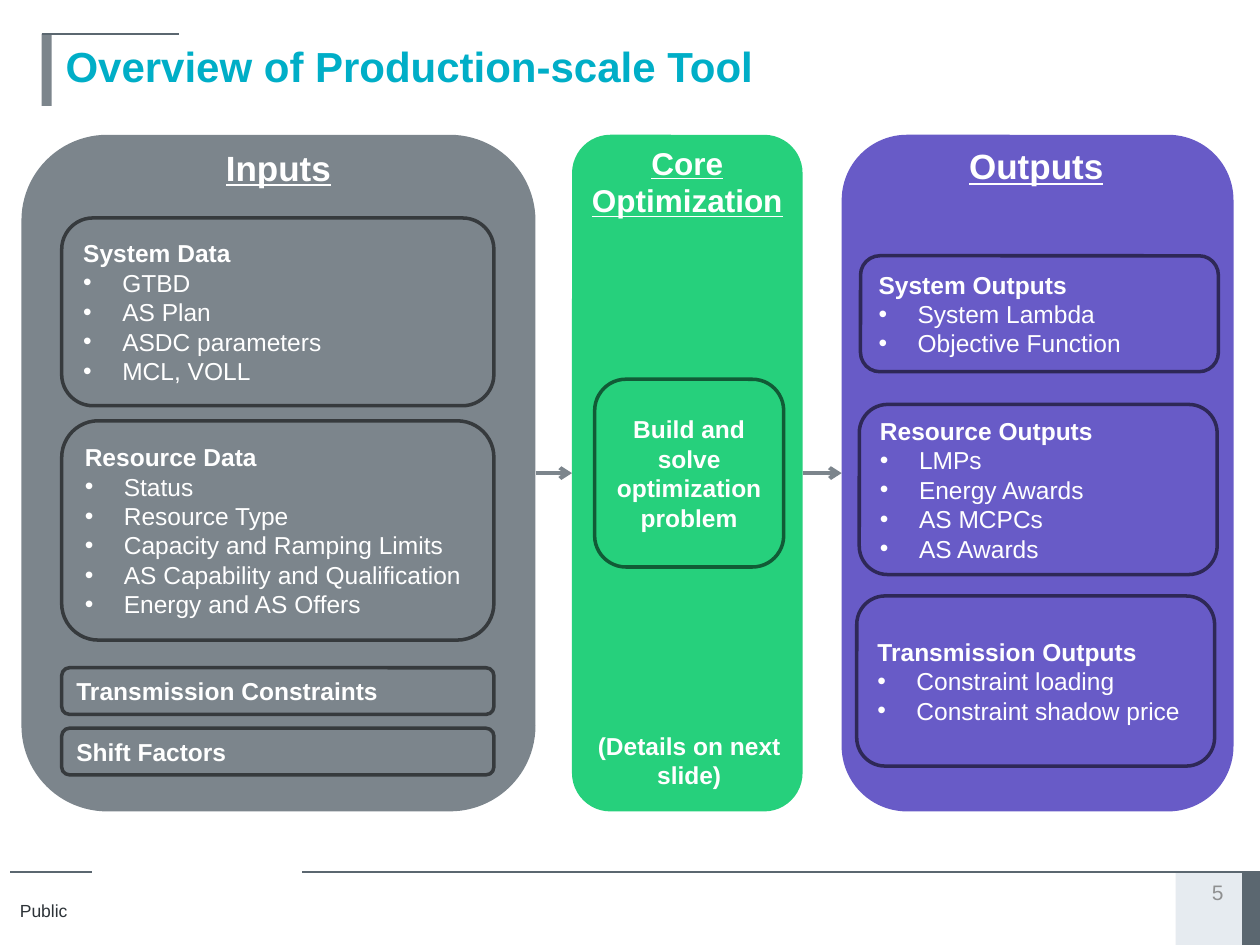
from lxml.etree import SubElement
from pptx import Presentation
from pptx.dml.color import RGBColor
from pptx.enum.shapes import MSO_CONNECTOR, MSO_SHAPE
from pptx.enum.text import MSO_ANCHOR, PP_ALIGN
from pptx.oxml.ns import qn
from pptx.util import Inches, Pt

GRAY, GREEN, PURPLE = "7C858C", "26D07C", "685BC7"
GRAY_EDGE, GREEN_EDGE, PURPLE_EDGE = "363A3D", "115B36", "2E2857"
SLATE, TEAL, WHITE = "5B6770", "00AEC7", "FFFFFF"
PANEL_TOP, PANEL_HEIGHT = 1.07, 5.37


def color(hex_text):
    return RGBColor.from_string(hex_text)


class SlideBuilder:
    font_name = "Arial"
    bullet_indent = Inches(0.31)

    def __init__(self, page):
        self.page = page

    def style(self, para, size, fill, bold=False, underline=False, align=PP_ALIGN.LEFT):
        para.alignment = align
        font = para.font
        font.name, font.size = self.font_name, Pt(size)
        font.bold, font.underline = bold, underline
        font.color.rgb = color(fill)

    def title(self, text, left, top, width, height):
        box = self.page.shapes.title
        box.left, box.top = Inches(left), Inches(top)
        box.width, box.height = Inches(width), Inches(height)
        box.text_frame.text = text
        box.text_frame.vertical_anchor = MSO_ANCHOR.TOP
        self.style(box.text_frame.paragraphs[0], 24, TEAL, bold=True)

    def block(self, kind, left, top, width, height, fill, edge=None, edge_width=2):
        shape = self.page.shapes.add_shape(
            kind, Inches(left), Inches(top), Inches(width), Inches(height))
        shape.shadow.inherit = False
        shape.fill.solid()
        shape.fill.fore_color.rgb = color(fill)
        if edge:
            shape.line.color.rgb = color(edge)
            shape.line.width = Pt(edge_width)
        else:
            shape.line.fill.background()
        return shape

    def panel(self, left, width, fill):
        return self.block(MSO_SHAPE.ROUNDED_RECTANGLE, left, PANEL_TOP, width,
                          PANEL_HEIGHT, fill)

    def card(self, left, top, width, height, fill, edge, heading, items=(),
             align=PP_ALIGN.LEFT):
        """Add an outlined box with a bold heading and bulleted items."""
        box = self.block(MSO_SHAPE.ROUNDED_RECTANGLE, left, top, width, height, fill, edge)
        frame = box.text_frame
        frame.word_wrap = True
        frame.vertical_anchor = MSO_ANCHOR.MIDDLE
        frame.text = heading
        self.style(frame.paragraphs[0], 14, WHITE, bold=True, align=align)
        for item in items:
            para = frame.add_paragraph()
            para.text = item
            self.bullet(para)
            self.style(para, 14, WHITE)

    def bullet(self, para):
        properties = para._p.get_or_add_pPr()
        properties.set("marL", str(self.bullet_indent))
        properties.set("indent", str(-self.bullet_indent))
        SubElement(properties, qn("a:buFont")).set("typeface", self.font_name)
        SubElement(properties, qn("a:buChar")).set("char", "•")

    def label(self, text, left, top, width, height, size, fill,
              anchor=MSO_ANCHOR.TOP, **text_style):
        box = self.page.shapes.add_textbox(
            Inches(left), Inches(top), Inches(width), Inches(height))
        frame = box.text_frame
        frame.word_wrap = True
        frame.vertical_anchor = anchor
        frame.text = text
        self.style(frame.paragraphs[0], size, fill, **text_style)

    def line(self, start, end, y, fill=SLATE, width=0.75):
        connector = self.page.shapes.add_connector(
            MSO_CONNECTOR.STRAIGHT, Inches(start), Inches(y), Inches(end), Inches(y))
        connector.line.color.rgb = color(fill)
        connector.line.width = Pt(width)
        SubElement(connector._element.spPr, qn("a:effectLst"))
        return connector

    def arrow(self, source, target):
        """Join the right side of source to the left side of target."""
        connector = self.line(0, 1, PANEL_TOP, GRAY, 2.25)
        connector.begin_connect(source, 3)
        connector.end_connect(target, 1)
        SubElement(connector.line._get_or_add_ln(), qn("a:tailEnd")).set("type", "arrow")


def add_frame(builder):
    """Add the title, its accent, and the footer."""
    builder.block(MSO_SHAPE.RECTANGLE, 9.33, 6.92, 0.58, 0.58, "E6EBF0")
    builder.block(MSO_SHAPE.RECTANGLE, 9.86, 6.92, 0.14, 0.58, SLATE, SLATE, 0.75)
    builder.line(0.08, 0.73, 6.92)
    builder.line(2.4, 9.9, 6.92)
    builder.label("Public", 0.06, 7.09, 3.11, 0.27, 10, "2D3338")
    builder.label("5", 9.33, 6.92, 0.67, 0.32, 12, "8F9091",
                  anchor=MSO_ANCHOR.MIDDLE, align=PP_ALIGN.CENTER)
    builder.block(MSO_SHAPE.RECTANGLE, 0.33, 0.27, 0.08, 0.57, GRAY)
    builder.line(0.33, 1.42, 0.27)
    builder.title("Overview of Production-scale Tool", 0.42, 0.27, 9.25, 0.62)


def add_flow(builder):
    inputs = builder.panel(0.17, 4.08, GRAY)
    core = builder.panel(4.54, 1.83, GREEN)
    outputs = builder.panel(6.68, 3.11, PURPLE)
    builder.arrow(inputs, core)
    builder.arrow(core, outputs)

    headings = [
        ("Inputs", 1.42, 1.11, 1.58, 0.44, 20),
        ("Core Optimization", 4.54, 1.09, 1.83, 0.71, 18),
        ("Outputs", 7.31, 1.1, 1.83, 0.44, 20),
    ]
    for heading in headings:
        builder.label(*heading, WHITE, bold=True, underline=True, align=PP_ALIGN.CENTER)

    input_cards = [
        (1.73, 1.49, "System Data", ["GTBD", "AS Plan", "ASDC parameters", "MCL, VOLL"]),
        (3.34, 1.74, "Resource Data",
         ["Status", "Resource Type", "Capacity and Ramping Limits",
          "AS Capability and Qualification", "Energy and AS Offers"]),
        (5.3, 0.37, "Transmission Constraints", []),
        (5.78, 0.37, "Shift Factors", []),
    ]
    for top, height, heading, items in input_cards:
        builder.card(0.49, top, 3.43, height, GRAY, GRAY_EDGE, heading, items)

    builder.card(4.72, 3.01, 1.5, 1.49, GREEN, GREEN_EDGE,
                 "Build and solve optimization problem", align=PP_ALIGN.CENTER)
    builder.label("(Details on next slide)", 4.58, 5.75, 1.78, 0.57, 14, WHITE,
                  bold=True, align=PP_ALIGN.CENTER)

    output_cards = [
        (6.83, 2.03, 0.92, "System Outputs", ["System Lambda", "Objective Function"]),
        (6.82, 3.21, 1.35, "Resource Outputs",
         ["LMPs", "Energy Awards", "AS MCPCs", "AS Awards"]),
        (6.8, 4.73, 1.35, "Transmission Outputs",
         ["Constraint loading", "Constraint shadow price"]),
    ]
    for left, top, height, heading, items in output_cards:
        builder.card(left, top, 2.84, height, PURPLE, PURPLE_EDGE, heading, items)


def main():
    deck = Presentation()
    deck.slide_width, deck.slide_height = Inches(10), Inches(7.5)
    title_only = deck.slide_layouts[5]
    builder = SlideBuilder(deck.slides.add_slide(title_only))
    add_frame(builder)
    add_flow(builder)
    deck.save("out.pptx")


if __name__ == "__main__":
    main()
